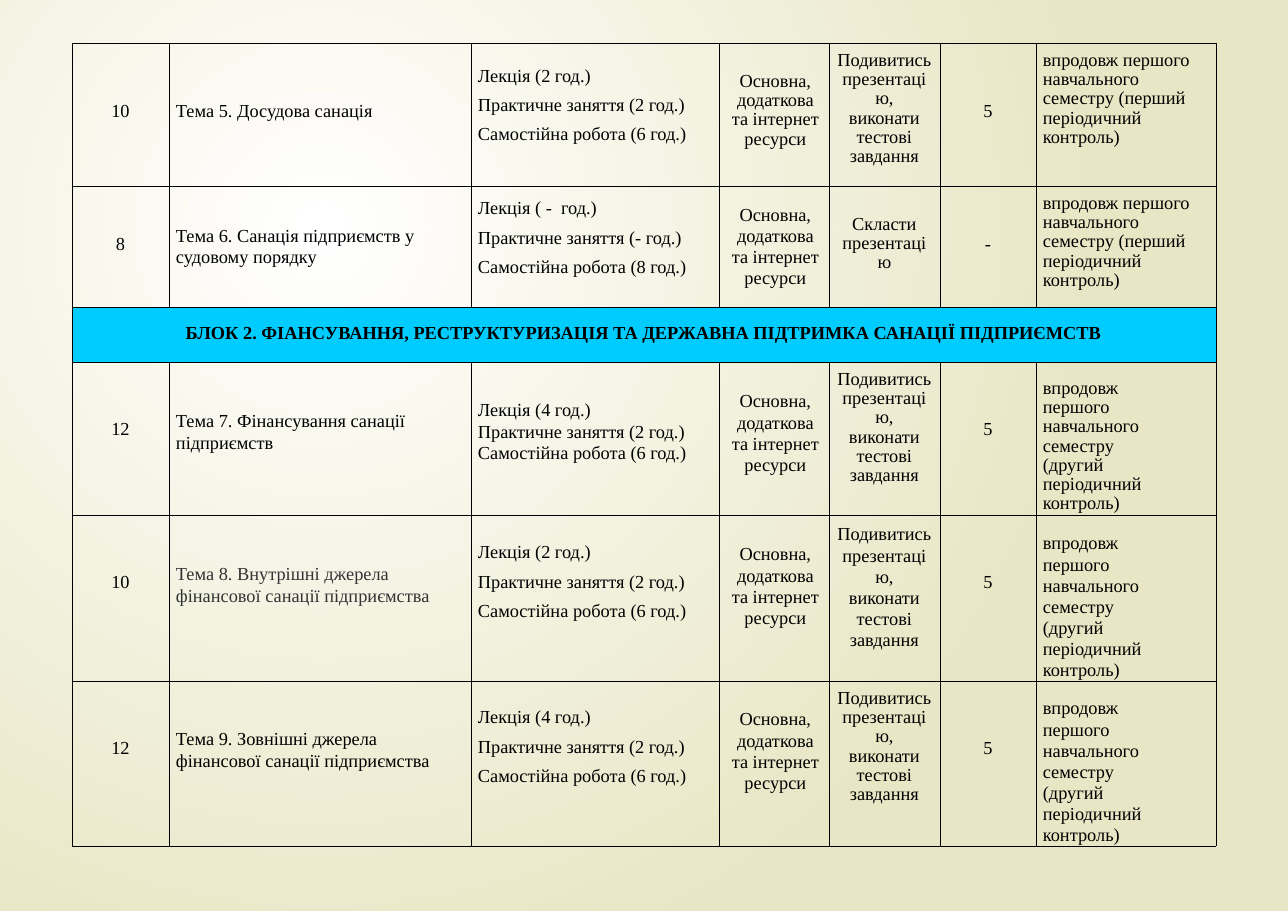
from dataclasses import dataclass
from itertools import accumulate

from lxml.etree import SubElement
from pptx import Presentation
from pptx.dml.color import RGBColor
from pptx.enum.text import PP_ALIGN
from pptx.oxml.ns import qn
from pptx.util import Pt

SCALE = 8300


@dataclass(frozen=True)
class Theme:
    font: str = "Times New Roman"
    size: int = 12
    ink: str = "000000"
    soft: str = "333333"
    band: str = "00CCFF"
    light: str = "FFFFFF"
    sand: str = "E8E6C4"
    rule: float = 0.5
    tight: float = 12.6
    loose: float = 13.8
    gap: float = 5.3


@dataclass(frozen=True)
class Topic:
    hours: str
    name: str
    study: tuple
    task: str
    score: str
    due: str
    tops: tuple
    lines: tuple
    gap: float
    ink: str


THEME = Theme()
TIGHT, LOOSE, GAP = THEME.tight, THEME.loose, THEME.gap
LEFT, TOP = 72, 43
WIDTHS = [97, 302, 248, 110, 111, 96, 180]
HEIGHTS = [143, 121, 55, 153, 166, 165]
ALIGNS = [PP_ALIGN.CENTER, PP_ALIGN.LEFT, PP_ALIGN.LEFT, PP_ALIGN.CENTER,
          PP_ALIGN.CENTER, PP_ALIGN.CENTER, PP_ALIGN.LEFT]
INSETS = [0, 7, 7, 3, 0, 0, 7]

BLOCK = "БЛОК 2. ФІАНСУВАННЯ, РЕСТРУКТУРИЗАЦІЯ ТА ДЕРЖАВНА ПІДТРИМКА САНАЦІЇ ПІДПРИЄМСТВ"
BLOCK_ROW = 2
SOURCES = "Основна,\vдодаткова\vта інтернет\vресурси"
WATCH = "Подивитись\vпрезентаці\vю,\vвиконати\vтестові\vзавдання"
WRITE = "Скласти\vпрезентаці\vю"
FIRST = "впродовж першого\vнавчального\vсеместру (перший\vперіодичний\vконтроль)"
SECOND = "впродовж\vпершого\vнавчального\vсеместру\v(другий\vперіодичний\vконтроль)"

TOPICS = {
    0: Topic("10", "Тема 5. Досудова санація", ("2", "2", "6"), WATCH, "5", FIRST,
             (57, 57, 22, 29, 8, 57, 8), (TIGHT, TIGHT, TIGHT), GAP, THEME.ink),
    1: Topic("8", "Тема 6. Санація підприємств у\vсудовому порядку", (" - ", "-", "8"),
             WRITE, "-", FIRST,
             (47, 39, 12, 18, 29, 47, 8), (LOOSE, TIGHT, TIGHT), GAP, THEME.ink),
    3: Topic("12", "Тема 7. Фінансування санації\vпідприємств", ("4", "2", "6"),
             WATCH, "5", SECOND,
             (57, 49, 38, 29, 8, 57, 17), (LOOSE, TIGHT, TIGHT), 0, THEME.ink),
    4: Topic("10", "Тема 8. Внутрішні джерела\vфінансової санації підприємства",
             ("2", "2", "6"), WATCH, "5", SECOND,
             (57, 49, 27, 29, 9, 57, 18), (LOOSE, LOOSE, LOOSE), GAP, THEME.soft),
    5: Topic("12", "Тема 9. Зовнішні джерела\vфінансової санації підприємства",
             ("4", "2", "6"), WATCH, "5", SECOND,
             (57, 48, 26, 28, 8, 57, 17), (LOOSE, TIGHT, LOOSE), GAP, THEME.ink),
}


def px(count):
    return count * SCALE


def paint(slide):
    fill = slide.background.fill
    fill.gradient()
    for stop, color in zip(fill.gradient_stops, (THEME.light, THEME.sand)):
        stop.color.rgb = RGBColor.from_string(color)
    grad = slide.element.find(".//" + qn("a:gradFill"))
    grad.remove(grad.find(qn("a:lin")))
    route = SubElement(grad, qn("a:path"), path="circle")
    SubElement(route, qn("a:fillToRect"), l="50000", t="50000", r="100000", b="100000")


def frame(cell):
    props = cell._tc.get_or_add_tcPr()
    for side in ("lnL", "lnR", "lnT", "lnB"):
        line = SubElement(props, qn("a:" + side), w=str(Pt(THEME.rule)))
        solid = SubElement(line, qn("a:solidFill"))
        SubElement(solid, qn("a:srgbClr"), val=THEME.ink)
    cell.fill.background()


def write(cell, lines, top, inset=0, align=PP_ALIGN.CENTER, pitch=LOOSE, gap=0,
          ink=THEME.ink, bold=False):
    cell.margin_left, cell.margin_top = px(inset), px(top)
    cell.margin_right = cell.margin_bottom = 0
    body = cell.text_frame
    body.text = "\n".join(lines)
    for index, para in enumerate(body.paragraphs):
        para.alignment = align
        para.line_spacing = Pt(pitch)
        para.space_before = Pt(gap if index else 0)
        font = para.font
        font.name, font.size, font.bold = THEME.font, Pt(THEME.size), bold
        font.color.rgb = RGBColor.from_string(ink)


def fill_row(table, row, topic):
    kinds = ("Лекція", "Практичне заняття", "Самостійна робота")
    study = [f"{kind} ({time} год.)" for kind, time in zip(kinds, topic.study)]
    texts = [[topic.hours], [topic.name], study, [SOURCES], [topic.task],
             [topic.score], [topic.due]]
    source, task, due = topic.lines
    pitches = [LOOSE, LOOSE, LOOSE, source, task, LOOSE, due]
    for col, lines in enumerate(texts):
        write(table.cell(row, col), lines, topic.tops[col], INSETS[col], ALIGNS[col],
              pitches[col], topic.gap if col == 2 else 0,
              topic.ink if col == 1 else THEME.ink)


def add_plan(slide):
    wide, high = list(accumulate(WIDTHS))[-1], list(accumulate(HEIGHTS))[-1]
    table = slide.shapes.add_table(len(HEIGHTS), len(WIDTHS), px(LEFT), px(TOP),
                                   px(wide), px(high)).table
    table.first_row = table.horz_banding = False
    for col, width in zip(table.columns, WIDTHS):
        col.width = px(width)
    for row, height in zip(table.rows, HEIGHTS):
        row.height = px(height)
    for cell in table.iter_cells():
        frame(cell)
    for row, topic in TOPICS.items():
        fill_row(table, row, topic)
    head = table.cell(BLOCK_ROW, 0)
    head.merge(table.cell(BLOCK_ROW, len(WIDTHS) - 1))
    head.fill.solid()
    head.fill.fore_color.rgb = RGBColor.from_string(THEME.band)
    write(head, [BLOCK], 16, bold=True)


def main():
    deck = Presentation()
    deck.slide_width, deck.slide_height = px(1288), px(911)
    slide = deck.slides.add_slide(deck.slide_layouts[6])
    paint(slide)
    add_plan(slide)
    deck.save("out.pptx")


if __name__ == "__main__":
    main()
